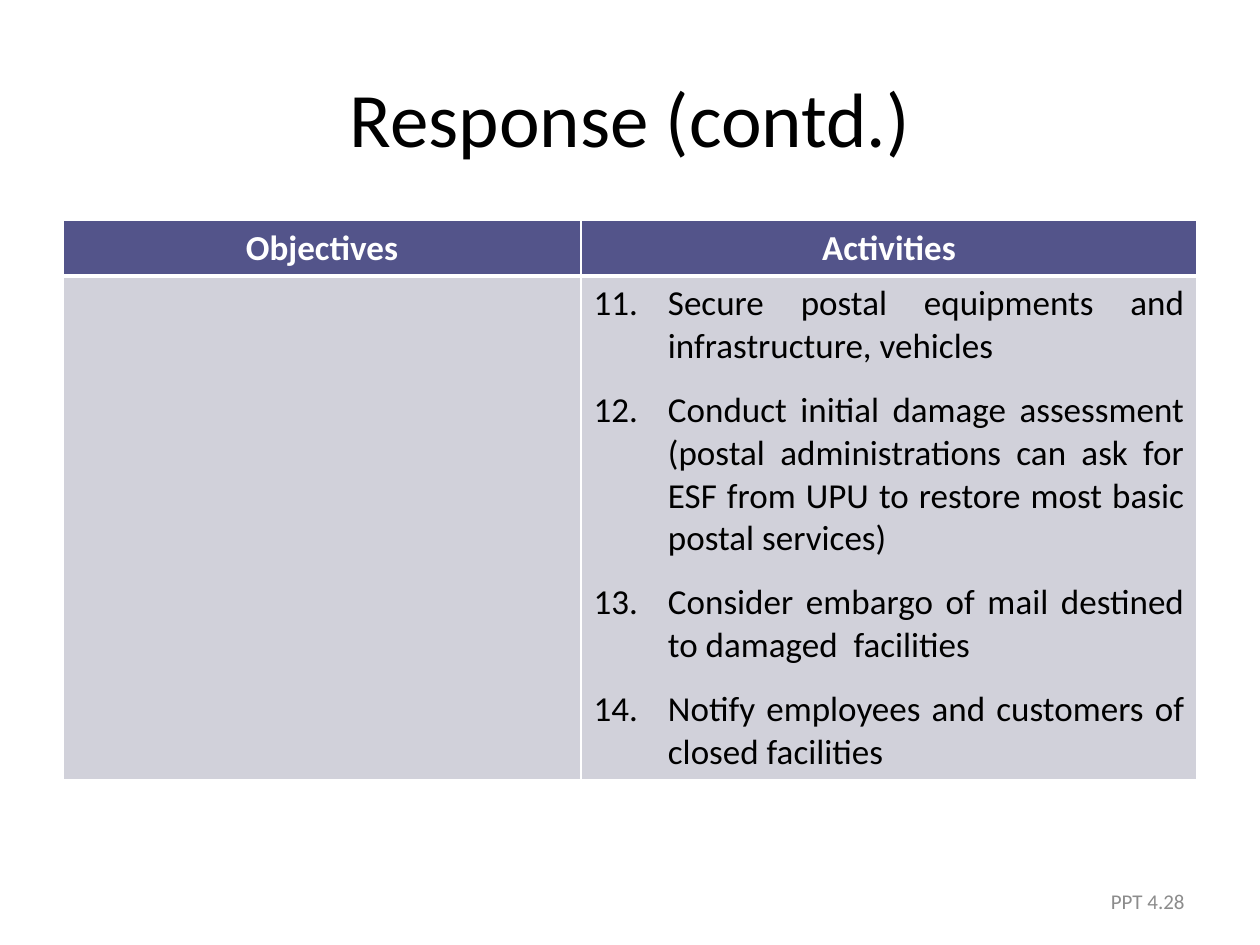
from lxml.etree import SubElement
from pptx import Presentation
from pptx.dml.color import RGBColor
from pptx.enum.text import MSO_ANCHOR as Anchor, PP_ALIGN as Align
from pptx.oxml.ns import qn
from pptx.util import Pt

FIRST_NUMBER = 11
ACTIVITIES = [
    "Secure postal equipments and infrastructure, vehicles",
    "Conduct initial damage assessment (postal administrations can ask for "
    "ESF from UPU to restore most basic postal services)",
    "Consider embargo of mail destined to damaged  facilities",
    "Notify employees and customers of closed facilities",
]


def color(value):
    return RGBColor.from_string(value)


def number_paragraph(para, start, indent):
    """Give the paragraph automatic numbering with a hanging indent."""
    props = para._p.get_or_add_pPr()
    props.set("marL", str(Pt(indent)))
    props.set("indent", str(-Pt(indent)))
    SubElement(props, qn("a:buFont"), typeface="+mj-lt")
    SubElement(props, qn("a:buAutoNum"), type="arabicPeriod", startAt=str(start))


def write(frame, lines, size=20, ink="000000", bold=False, align=Align.LEFT,
          after=0, start=None, indent=42.5):
    """Fill a text frame with one paragraph per line, numbered if start is set."""
    for index, line in enumerate(lines):
        para = frame.add_paragraph() if index else frame.paragraphs[0]
        para.alignment = align
        para.space_after = Pt(after)
        if start is not None:
            number_paragraph(para, start, indent)
        span = para.add_run()
        span.text = line
        span.font.name = Page.font
        span.font.size = Pt(size)
        span.font.bold = bold
        span.font.color.rgb = color(ink)


def border_cell(cell, ink, **widths):
    """Draw the four cell edges, 1 pt wide unless named in widths."""
    props = cell._tc.get_or_add_tcPr()
    for side in "LRTB":
        line = SubElement(props, qn(f"a:ln{side}"), w=str(Pt(widths.get(side, 1))))
        fill = SubElement(line, qn("a:solidFill"))
        SubElement(fill, qn("a:srgbClr"), val=ink)


class Page:
    font = "Calibri"
    header_fill = "53548A"
    body_fill = "D1D1DA"
    white = "FFFFFF"
    muted = "8C8C8C"

    def __init__(self, deck):
        self.slide = deck.slides.add_slide(deck.slide_layouts[5])

    def title(self, text, left, top, width, height):
        box = self.slide.shapes.title
        box.left, box.top, box.width, box.height = map(Pt, (left, top, width, height))
        box.text_frame.vertical_anchor = Anchor.MIDDLE
        write(box.text_frame, [text], size=44, align=Align.CENTER)

    def table(self, headings, columns, left, top, widths, heights):
        """Add a heading row above one row holding a numbered list per column."""
        table = self.slide.shapes.add_table(
            2, len(headings), Pt(left), Pt(top), Pt(sum(widths)), Pt(sum(heights))).table
        for row, height in zip(table.rows, heights):
            row.height = Pt(height)
        for index, (heading, lines) in enumerate(zip(headings, columns)):
            table.columns[index].width = Pt(widths[index])
            header, body = table.cell(0, index), table.cell(1, index)
            border_cell(header, self.white, B=3)
            border_cell(body, self.white, T=3)
            for cell, fill in ((header, self.header_fill), (body, self.body_fill)):
                cell.fill.solid()
                cell.fill.fore_color.rgb = color(fill)
            write(header.text_frame, [heading], ink=self.white, bold=True,
                  align=Align.CENTER, after=12)
            write(body.text_frame, lines, align=Align.JUSTIFY, after=12,
                  start=FIRST_NUMBER)

    def label(self, text, left, top, width, height):
        box = self.slide.shapes.add_textbox(*map(Pt, (left, top, width, height)))
        box.text_frame.word_wrap = True
        box.text_frame.vertical_anchor = Anchor.MIDDLE
        write(box.text_frame, [text], size=12, ink=self.muted, align=Align.RIGHT)


def main():
    deck = Presentation()
    deck.slide_width, deck.slide_height = Pt(720), Pt(540)
    page = Page(deck)
    page.title("Response (contd.)", 36, 21.6, 648, 90)
    page.table(["Objectives", "Activities"], [[], ACTIVITIES],
               36, 126, widths=(296, 352), heights=(31, 287))
    page.label("PPT 4.28", 516, 500.5, 168, 28.75)
    deck.save("out.pptx")


if __name__ == "__main__":
    main()
